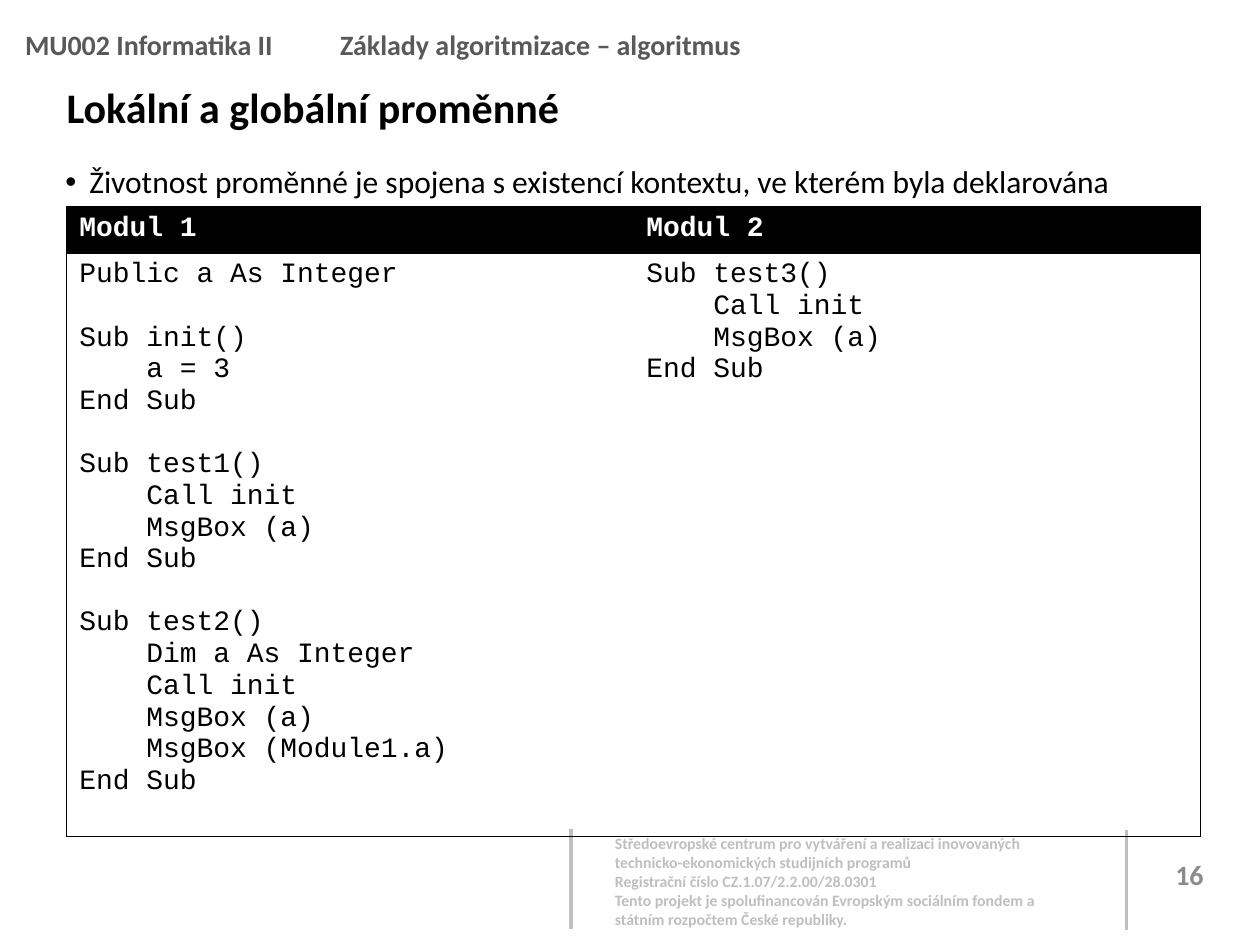
from lxml import etree
from pptx import Presentation, util as u
from pptx.dml.color import RGBColor
from pptx.enum import shapes, text
from pptx.oxml import ns

INK = {"black": "000000", "white": "FFFFFF", "head": "595959",
       "foot": "BFBFBF", "page": "8C8C8C"}
deck = Presentation()
deck.slide_width, deck.slide_height = u.Inches(10), u.Inches(7.5)
col, row = deck.slide_width / 100, deck.slide_height / 75
slide = deck.slides.add_slide(deck.slide_layouts[6])


def write(para, words, size, ink, bold=True, face="Calibri"):
    run = para.add_run()
    run.text = words
    font = run.font
    font.size, font.bold, font.name = u.Pt(size), bold, face
    font.color.rgb = RGBColor.from_string(INK[ink])


def frame(x, y, w, h, mid=False):
    box = slide.shapes.add_textbox(int(x * col), int(y * row), int(w * col), int(h * row))
    body = box.text_frame
    body.word_wrap = True
    if mid:
        body.vertical_anchor = text.MSO_ANCHOR.MIDDLE
    return body


foot = frame(48.4, 65.8, 35.4, 8.4)
foot.margin_left = foot.margin_right = int(0.4 * col)
foot.margin_top = foot.margin_bottom = int(0.4 * row)
notes = [
    "Středoevropské centrum pro vytváření a realizaci inovovaných technicko-ekonomických studijních programů",
    "Registrační číslo CZ.1.07/2.2.00/28.0301",
    "Tento projekt je spolufinancován Evropským sociálním fondem a státním rozpočtem České republiky.",
]
for i, note in enumerate(notes):
    para = foot.add_paragraph() if i else foot.paragraphs[0]
    write(para, note, 9, "foot")

para = frame(91, 67.4, 6.8, 4, True).paragraphs[0]
para.alignment = text.PP_ALIGN.CENTER
write(para, "16", 16, "page")

for x, y in ((45.3, 65.8), (89.4, 65.9)):
    rule = slide.shapes.add_connector(
        shapes.MSO_CONNECTOR.STRAIGHT,
        int(x * col), int(y * row), int(x * col), int((y + 7.9) * row))
    rule.line.width = u.Pt(2)
    rule.line.color.rgb = RGBColor.from_string(INK["foot"])
    etree.SubElement(rule._element.spPr, ns.qn("a:effectLst"))

para = frame(4.2, 12.4, 92.1, 4).paragraphs[0]
props = para._p.get_or_add_pPr()
props.set("marL", str(int(1.9 * col)))
props.set("indent", str(int(-1.9 * col)))
etree.SubElement(props, ns.qn("a:buFont")).set("typeface", "Arial")
etree.SubElement(props, ns.qn("a:buChar")).set("char", "•")
write(para, "Životnost proměnné je spojena s existencí kontextu, ve kterém byla deklarována",
      18, "black", False)

para = frame(4.3, 6, 92.1, 5, True).paragraphs[0]
write(para, "Lokální a globální proměnné", 24, "black")

subs = [
    [["Public a As Integer"],
     ["Sub init()", "    a = 3", "End Sub"],
     ["Sub test1()", "    Call init", "    MsgBox (a)", "End Sub"],
     ["Sub test2()", "    Dim a As Integer", "    Call init", "    MsgBox (a)",
      "    MsgBox (Module1.a)", "End Sub"]],
    [["Sub test3()", "    Call init", "    MsgBox (a)", "End Sub"]],
]
grid = slide.shapes.add_table(2, 2, int(5.3 * col), int(16.4 * row),
                              int(90 * col), int(50 * row)).table
grid.first_row = grid.horz_banding = False
grid.rows[0].height, grid.rows[1].height = int(3.7 * row), int(46.3 * row)
for c, code in enumerate(subs):
    for r, parts in enumerate(([[f"Modul {c + 1}"]], code)):
        cell = grid.cell(r, c)
        props = cell._tc.get_or_add_tcPr()
        for side, on in (("L", c == 0), ("R", c == 1), ("T", True), ("B", True)):
            edge = etree.SubElement(props, ns.qn("a:ln" + side), w=str(u.Pt(0.75)))
            kind = etree.SubElement(edge, ns.qn("a:solidFill" if on else "a:noFill"))
            if on:
                etree.SubElement(kind, ns.qn("a:srgbClr"), val=INK["black"])
        if r:
            cell.fill.background()
        else:
            cell.fill.solid()
            cell.fill.fore_color.rgb = RGBColor.from_string(INK["black"])
        for p, part in enumerate(parts):
            for n, line in enumerate(part):
                body = cell.text_frame
                para = body.add_paragraph() if p or n else body.paragraphs[0]
                if p and not n:
                    para.space_before = u.Pt(18)
                write(para, line, 16, "black" if r else "white", r == 0, "Courier New")

para = frame(1, 0.4, 95.5, 5).paragraphs[0]
para.line_spacing = 1.5
write(para, "MU002 Informatika II\t\tZáklady algoritmizace – algoritmus", 16, "head")

deck.save("out.pptx")
